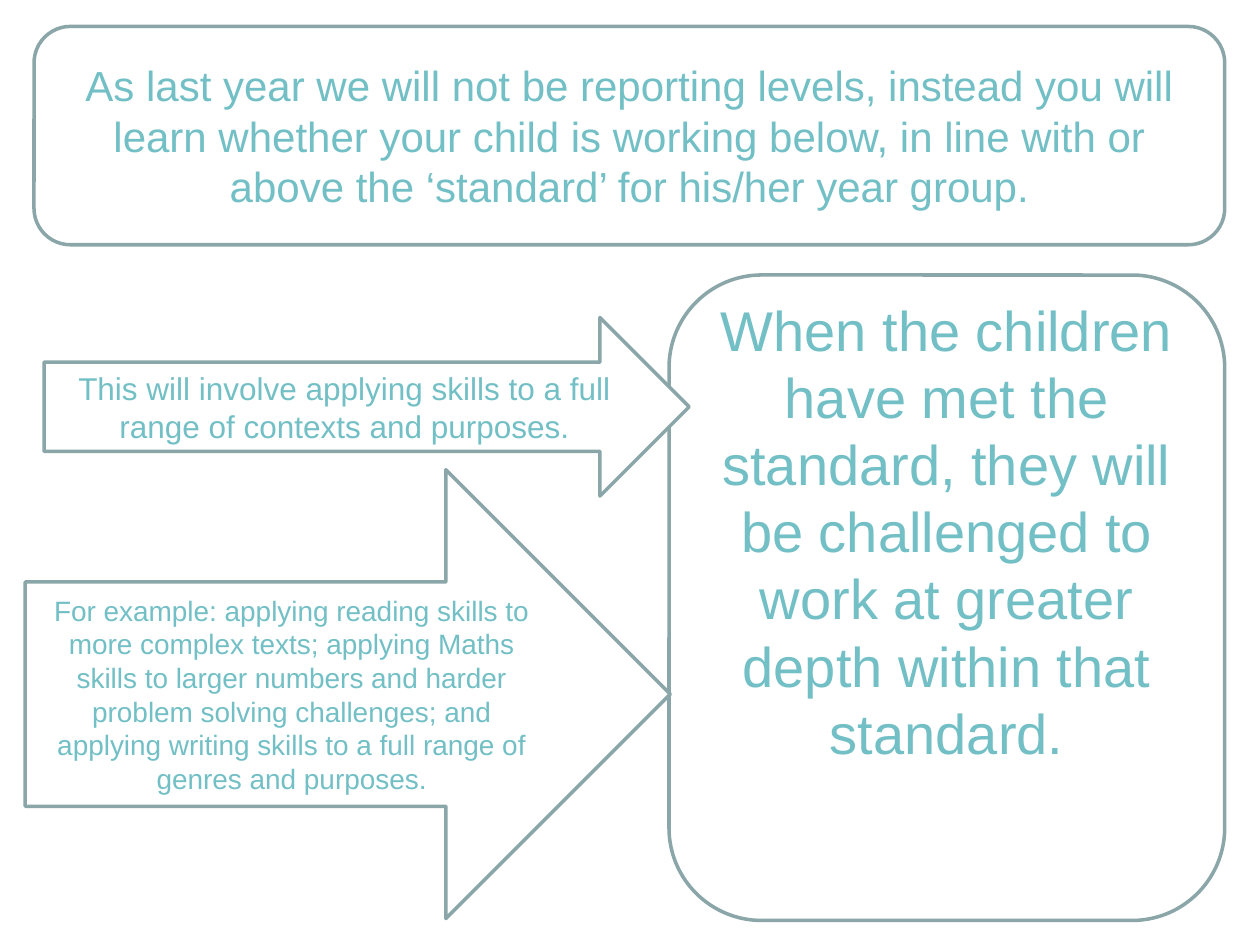
from pptx import Presentation
from pptx.util import Inches, Pt
from pptx.dml.color import RGBColor
from pptx.enum.shapes import MSO_SHAPE
from pptx.enum.text import MSO_ANCHOR, PP_ALIGN

COLORS = {"fill": "FFFFFF", "line": "8AA6A8", "text": "72BFC5"}
WIDTH, HEIGHT = 10, 7.5
BOX, ARROW = MSO_SHAPE.ROUNDED_RECTANGLE, MSO_SHAPE.RIGHT_ARROW

# Content: preset, (left, top, width, height) as shares of the slide,
# text size, bottom inset in inches, text
PANELS = [
    (BOX, (0.027, 0.028, 0.945, 0.231), 24, 0.05,
     "As last year we will not be reporting levels, instead you will learn "
     "whether your child is working below, in line with or above the "
     "‘standard’ for his/her year group."),
    (BOX, (0.531, 0.291, 0.441, 0.683), 32, 1.12,
     "When the children have met the standard, they will be challenged to "
     "work at greater depth within that standard."),
    (ARROW, (0.035, 0.336, 0.512, 0.189), 18, 0.05,
     "This will involve applying skills to a full range of contexts and "
     "purposes."),
    (ARROW, (0.02, 0.497, 0.512, 0.475), 16, 0.05,
     "For example: applying reading skills to more complex texts; applying "
     "Maths skills to larger numbers and harder problem solving challenges; "
     "and applying writing skills to a full range of genres and purposes."),
]


def color(name):
    return RGBColor.from_string(COLORS[name])


def set_all(obj, values):
    for name, value in values.items():
        setattr(obj, name, value)


def add_panel(s, preset, shares, size, bottom, text):
    # Outline and fill
    scale = (WIDTH, HEIGHT, WIDTH, HEIGHT)
    sp = s.shapes.add_shape(preset, *(Inches(a * b) for a, b in zip(shares, scale)))
    sp.shadow.inherit = False
    sp.fill.solid()
    sp.fill.fore_color.rgb = color("fill")
    sp.line.color.rgb = color("line")
    sp.line.width = Pt(2)

    # Text
    tf = sp.text_frame
    set_all(tf, {"word_wrap": True, "vertical_anchor": MSO_ANCHOR.MIDDLE,
                 "margin_bottom": Inches(bottom)})
    p = tf.paragraphs[0]
    p.alignment = PP_ALIGN.CENTER
    r = p.add_run()
    r.text = text
    set_all(r.font, {"name": "Arial", "size": Pt(size)})
    r.font.color.rgb = color("text")


prs = Presentation()
set_all(prs, {"slide_width": Inches(WIDTH), "slide_height": Inches(HEIGHT)})
s = prs.slides.add_slide(prs.slide_layouts[6])
for panel in PANELS:
    add_panel(s, *panel)
prs.save("out.pptx")
